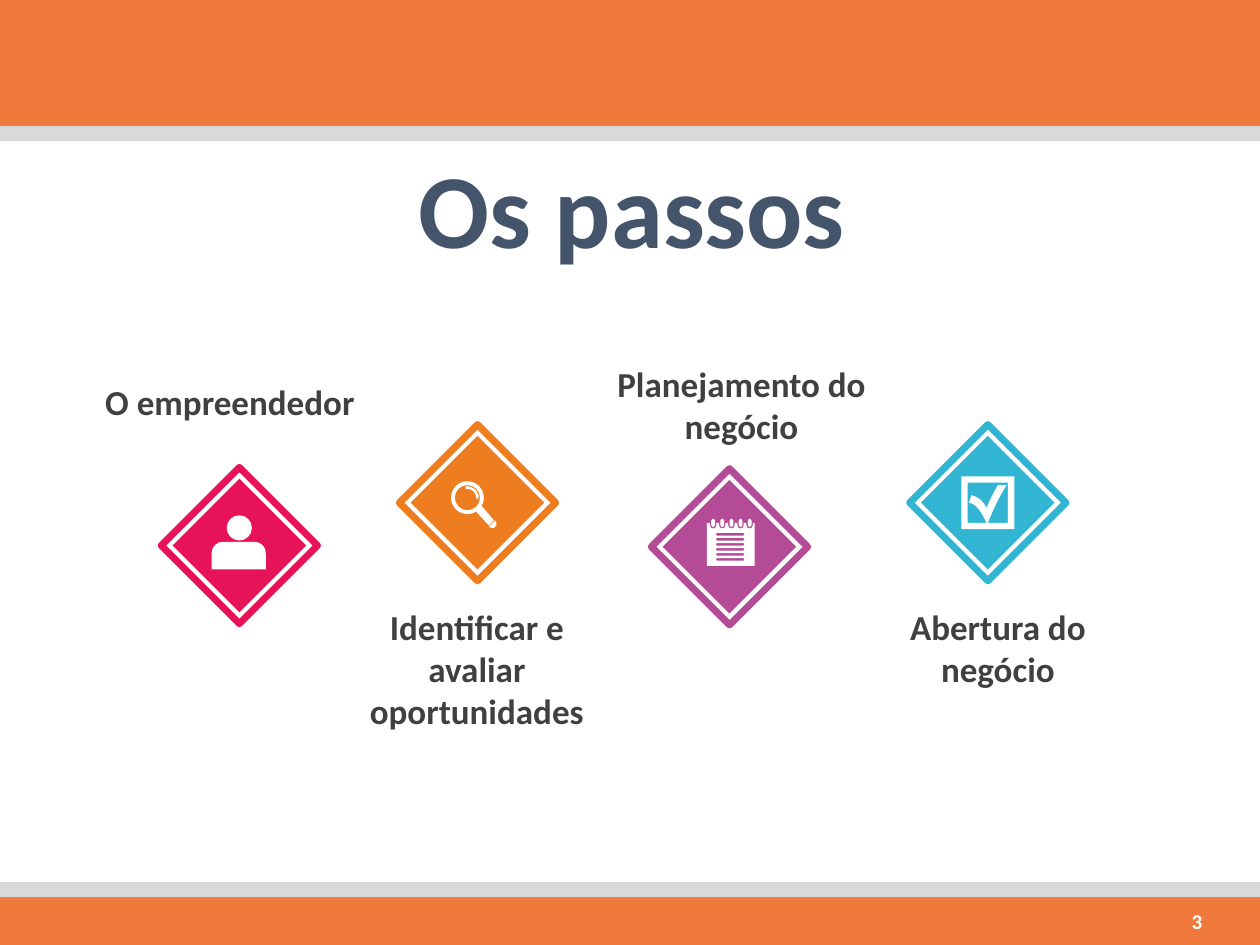
from dataclasses import dataclass
from math import cos, radians, sin, tan
from typing import Callable

from lxml.etree import SubElement
from pptx import Presentation
from pptx.dml.color import RGBColor
from pptx.enum.shapes import MSO_SHAPE
from pptx.enum.text import MSO_ANCHOR, MSO_AUTO_SIZE, PP_ALIGN
from pptx.oxml.ns import qn
from pptx.util import Emu, Inches, Pt

COLUMNS, ROWS = 10, 7.5
CELL = Inches(1)
FONT = "Calibri"
ORANGE, GREY, WHITE, NAVY, CHARCOAL = "EF7A3B", "D9D9D9", "FFFFFF", "44546A", "404040"
FILLED_SIZE, OUTLINE_SIZE = 1.06, 1.24

Point = tuple[float, float]
Segment = tuple[Point, ...]
Contour = list[Segment]


@dataclass(frozen=True)
class Box:
    column: float
    row: float
    width: float
    height: float

    def lengths(self) -> list[Emu]:
        return [cells(n) for n in (self.column, self.row, self.width, self.height)]


@dataclass(frozen=True)
class Step:
    label: str
    label_box: Box
    centre: Point
    color: str
    icon: Callable[[], list[Contour]]


def cells(count: float) -> Emu:
    return Emu(round(count * CELL))


def rgb(value: str) -> RGBColor:
    return RGBColor.from_string(value)


def lines(*points: Point) -> Contour:
    return [(point,) for point in points]


def arc(x: float, y: float, radius: float, start: float = 0, end: float = 360) -> Contour:
    pieces = max(1, round(abs(end - start) / 90))
    sweep = radians(end - start) / pieces
    reach = 4 / 3 * tan(sweep / 4)

    def place(angle: float, pull: float = 0) -> Point:
        return (x + radius * (cos(angle) - pull * sin(angle)),
                y + radius * (sin(angle) + pull * cos(angle)))

    angles = [radians(start) + sweep * i for i in range(pieces + 1)]
    return lines(place(angles[0])) + [
        (place(a, reach), place(b, -reach), place(b)) for a, b in zip(angles, angles[1:])]


def rectangle(left: float, top: float, right: float, bottom: float) -> Contour:
    return lines((left, top), (right, top), (right, bottom), (left, bottom))


def person() -> list[Contour]:
    body = [*lines((-0.22, 0.19)), *arc(-0.13, 0.06, 0.09, 180, 270),
            *arc(0.12, 0.06, 0.09, 270, 360), *lines((0.21, 0.19))]
    return [body, arc(0, -0.14, 0.1)]


def magnifier() -> list[Contour]:
    x, y = -0.08, -0.04
    rim = arc(x, y, 0.13, 58, 390) + lines((0.13, 0.14), (0.09, 0.18))
    glint = arc(x, y, 0.09, -100, 5) + arc(x, y, 0.07, 5, -100)
    tip = lines((0.14, 0.14), (0.15, 0.16), (0.15, 0.18), (0.13, 0.2), (0.11, 0.2),
                (0.09, 0.19))
    return [rim, arc(x, y, 0.1), glint, tip]


def notepad() -> list[Contour]:
    rings = [-0.13 + 0.29 / 4 * i for i in range(5)]
    ring, notch = 0.03 / 2, 0.05 / 2
    page = lines((-0.18, -0.19))
    for x in rings:
        page += [*lines((x - notch, -0.19)), *arc(x, -0.17, notch, 180, 0),
                 *lines((x + notch, -0.19))]
    page += lines((0.2, -0.19), (0.2, 0.15), (-0.18, 0.15))
    loops = [arc(x, -0.21, ring, 180, 360) + arc(x, -0.17, ring, 0, 180) for x in rings]
    rules = [arc(-0.1, y, 0.01, 270, 90) + arc(0.11, y, 0.01, 90, -90)
             for y in (-0.1 + 0.04 * i for i in range(6))]
    return [page, *loops, *rules]


def checkbox() -> list[Contour]:
    tick = [*lines((-0.01, 0.16)), ((-0.04, 0.1), (-0.08, 0.01), (-0.15, 0)),
            *lines((-0.13, -0.06)), ((-0.06, -0.04), (-0.04, -0.01), (-0.01, 0.04)),
            ((0.02, -0.03), (0.04, -0.07), (0.08, -0.14)),
            *lines((0.15, -0.14)), ((0.09, -0.05), (0.04, 0.06), (0, 0.16))]
    return [rectangle(-0.21, -0.21, 0.21, 0.21), rectangle(-0.16, -0.16, 0.16, 0.16), tick]


def write(frame, text: str, size: int, color: str) -> None:
    paragraph = frame.paragraphs[0]
    paragraph.alignment = PP_ALIGN.CENTER
    run = paragraph.add_run()
    run.text = text
    run.font.name, run.font.size, run.font.bold = FONT, Pt(size), True
    run.font.color.rgb = rgb(color)


def add_text(slide, text: str, box: Box, size: int, color: str,
             anchor: MSO_ANCHOR = MSO_ANCHOR.TOP) -> None:
    frame = slide.shapes.add_textbox(*box.lengths()).text_frame
    frame.word_wrap = True
    frame.auto_size = MSO_AUTO_SIZE.SHAPE_TO_FIT_TEXT
    frame.vertical_anchor = anchor
    write(frame, text, size, color)


def paint(shape, color: str) -> None:
    shape.shadow.inherit = False
    shape.fill.solid()
    shape.fill.fore_color.rgb = rgb(color)
    shape.line.fill.background()


def add_band(slide, top: float, height: float, color: str) -> None:
    box = Box(0, top, COLUMNS, height)
    paint(slide.shapes.add_shape(MSO_SHAPE.RECTANGLE, *box.lengths()), color)


def add_diamond(shapes, centre: Point, size: float):
    box = Box(centre[0] - size / 2, centre[1] - size / 2, size, size)
    return shapes.add_shape(MSO_SHAPE.DIAMOND, *box.lengths())


def add_badge(slide, step: Step) -> None:
    group = slide.shapes.add_group_shape()
    paint(add_diamond(group.shapes, step.centre, FILLED_SIZE), step.color)
    outline = add_diamond(group.shapes, step.centre, OUTLINE_SIZE)
    outline.shadow.inherit = False
    outline.fill.background()
    outline.line.color.rgb = rgb(step.color)
    outline.line.width = Pt(4)
    SubElement(outline.line._get_or_add_ln(), qn("a:round"))


def bend_curves(shape, segments: list[Segment]) -> None:
    drawn = iter(list(shape._element.iter(qn("a:lnTo"))))
    for segment in segments:
        parts = [next(drawn) for _ in segment]
        if len(parts) == 3:
            bend = SubElement(parts[0].getparent(), qn("a:cubicBezTo"))
            parts[0].addprevious(bend)
            for part in parts:
                bend.append(part[0])
                part.getparent().remove(part)


def add_icon(slide, step: Step) -> None:
    builder = None
    segments = []
    for contour in step.icon():
        start, *points = [(cells(step.centre[0] + x), cells(step.centre[1] + y))
                          for segment in contour for x, y in segment]
        if builder is None:
            builder = slide.shapes.build_freeform(*start)
        else:
            builder.move_to(*start)
        builder.add_line_segments(points, close=True)
        segments += contour[1:]
    shape = builder.convert_to_shape()
    bend_curves(shape, segments)
    paint(shape, WHITE)


def set_title(slide, text: str, box: Box) -> None:
    title = slide.shapes.title
    title.left, title.top, title.width, title.height = box.lengths()
    title.text_frame.auto_size = MSO_AUTO_SIZE.NONE
    title.text_frame.vertical_anchor = MSO_ANCHOR.MIDDLE
    write(title.text_frame, text, 60, NAVY)


STEPS = [
    Step("O empreendedor", Box(0.69, 2.97, 2.27, 0.44), (1.9, 4.33), "E61358", person),
    Step("Identificar e avaliar oportunidades", Box(2.65, 4.76, 2.27, 1.11),
         (3.79, 3.99), "ED7D1F", magnifier),
    Step("Planejamento do negócio", Box(4.75, 2.83, 2.27, 0.77),
         (5.79, 4.34), "B44B97", notepad),
    Step("Abertura do negócio", Box(6.87, 4.76, 2.1, 0.77), (7.84, 3.99), "32B5D3", checkbox),
]


def main() -> None:
    presentation = Presentation()
    presentation.slide_width, presentation.slide_height = cells(COLUMNS), cells(ROWS)
    slide = presentation.slides.add_slide(presentation.slide_layouts[5])
    for top, height, color in ((0, 1.06, ORANGE), (7.11, 0.39, ORANGE),
                               (7, 0.12, GREY), (1, 0.12, GREY)):
        add_band(slide, top, height, color)
    add_text(slide, "3", Box(9.25, 7.16, 0.5, 0.3), 12, WHITE, MSO_ANCHOR.MIDDLE)
    set_title(slide, "Os passos", Box(0.27, 1.34, 9.49, 0.59))
    for step in STEPS:
        add_badge(slide, step)
        add_text(slide, step.label, step.label_box, 20, CHARCOAL)
        add_icon(slide, step)
    presentation.save("out.pptx")


if __name__ == "__main__":
    main()
